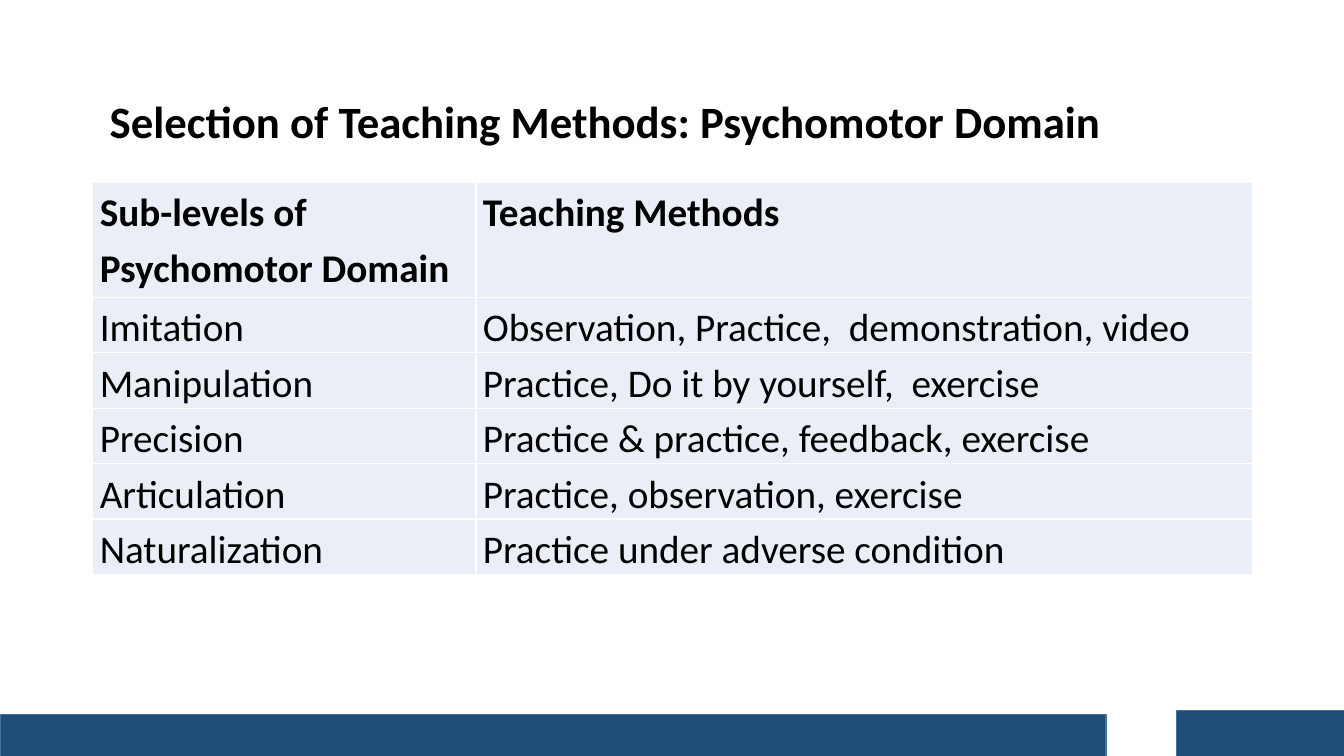
"""Build a slide with a table of teaching methods for the psychomotor domain."""
from lxml.etree import SubElement
from pptx import Presentation
from pptx.dml.color import RGBColor
from pptx.enum.shapes import MSO_SHAPE
from pptx.enum.text import MSO_ANCHOR, PP_ALIGN
from pptx.oxml.ns import qn
from pptx.util import Inches, Pt

TITLE = "Selection of Teaching Methods: Psychomotor Domain"
ROWS = [
    (["Sub-levels of", "Psychomotor Domain"], ["Teaching Methods"]),
    (["Imitation"], ["Observation, Practice,  demonstration, video"]),
    (["Manipulation"], ["Practice, Do it by yourself,  exercise"]),
    (["Precision"], ["Practice & practice, feedback, exercise"]),
    (["Articulation"], ["Practice, observation, exercise"]),
    (["Naturalization"], ["Practice under adverse condition"]),
]
COLUMN_WIDTHS = (3.8, 7.7)
HEADER_HEIGHT, ROW_HEIGHT = 1.14, 0.55
FOOTER_BARS = [(0, 7.09, 10.97, 0.46), (11.67, 7.05, 1.68, 0.46)]
BLACK, WHITE, PALE, NAVY, EDGE = "000000", "FFFFFF", "EAEFF7", "1F4E79", "43739E"


def color(code):
    return RGBColor.from_string(code)


def write(frame, lines, size=28, bold=False, after=0):
    frame.word_wrap = True
    for index, line in enumerate(lines):
        para = frame.paragraphs[0] if index == 0 else frame.add_paragraph()
        para.alignment = PP_ALIGN.LEFT
        para.line_spacing = 1.15
        para.space_after = Pt(after)
        span = para.add_run()
        span.text = line
        span.font.name = "Calibri"
        span.font.size = Pt(size)
        span.font.bold = bold
        span.font.color.rgb = color(BLACK)


def add_title(page):
    box = page.shapes.add_textbox(Inches(0.99), Inches(0.8), Inches(11.34), Inches(0.72))
    write(box.text_frame, [TITLE], size=32, bold=True, after=6)


def add_footer_bar(page, place):
    bar = page.shapes.add_shape(MSO_SHAPE.RECTANGLE, *map(Inches, place))
    bar.shadow.inherit = False
    bar.fill.solid()
    bar.fill.fore_color.rgb = color(NAVY)
    bar.line.color.rgb = color(EDGE)
    bar.line.width = Pt(1)


def style_cell(cell):
    cell.margin_left = cell.margin_right = Inches(0.07)
    cell.margin_top = cell.margin_bottom = 0
    cell.vertical_anchor = MSO_ANCHOR.TOP
    properties = cell._tc.get_or_add_tcPr()
    for side in ("a:lnL", "a:lnR", "a:lnT", "a:lnB"):
        border = SubElement(properties, qn(side), w=str(Pt(1)))
        SubElement(SubElement(border, qn("a:solidFill")), qn("a:srgbClr"), val=WHITE)
    cell.fill.solid()
    cell.fill.fore_color.rgb = color(PALE)


def add_methods_table(page):
    heights = [HEADER_HEIGHT] + [ROW_HEIGHT] * (len(ROWS) - 1)
    frame = page.shapes.add_table(
        len(ROWS), len(COLUMN_WIDTHS), Inches(0.92), Inches(1.81),
        Inches(sum(COLUMN_WIDTHS)), Inches(sum(heights)))
    table = frame.table
    table.horz_banding = False
    for column, width in zip(table.columns, COLUMN_WIDTHS):
        column.width = Inches(width)
    for number, (row, height, texts) in enumerate(zip(table.rows, heights, ROWS)):
        row.height = Inches(height)
        for cell, lines in zip(row.cells, texts):
            style_cell(cell)
            write(cell.text_frame, lines, bold=number == 0)


def main():
    deck = Presentation()
    deck.slide_width, deck.slide_height = Inches(13.33), Inches(7.5)
    page = deck.slides.add_slide(deck.slide_layouts[6])
    add_title(page)
    for place in FOOTER_BARS:
        add_footer_bar(page, place)
    add_methods_table(page)
    deck.save("out.pptx")


if __name__ == "__main__":
    main()
